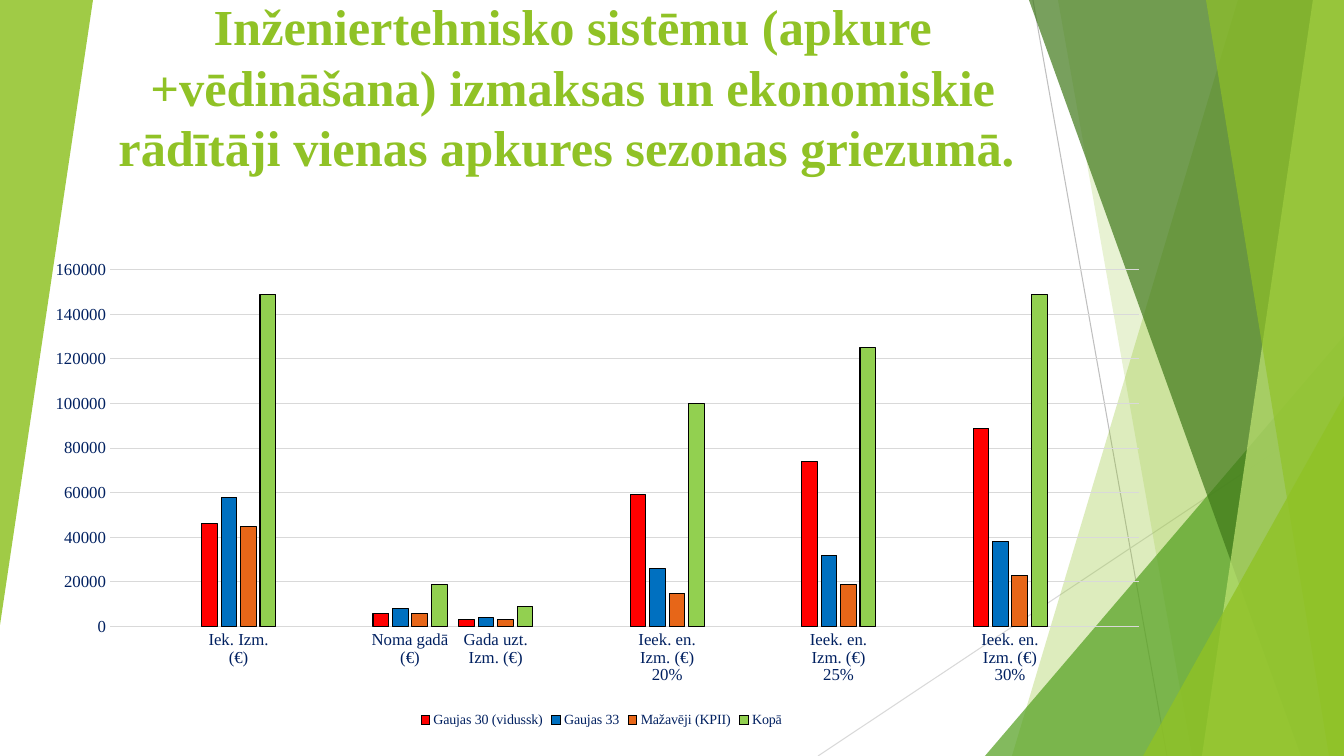
from dataclasses import dataclass

from lxml.etree import SubElement
from pptx import Presentation
from pptx.chart.data import CategoryChartData
from pptx.dml.color import RGBColor
from pptx.enum.chart import XL_CHART_TYPE as Kind, XL_LEGEND_POSITION as Spot, XL_TICK_MARK as Tick
from pptx.enum.shapes import MSO_CONNECTOR as Link, MSO_SHAPE as Form
from pptx.enum.text import MSO_ANCHOR as Anchor, MSO_AUTO_SIZE as Fit, PP_ALIGN as Align
from pptx.oxml import parse_xml
from pptx.oxml.ns import nsdecls, qn
from pptx.util import Pt

SCALE = 914400 / 100.8
WIDE, HIGH = 1344, 756


@dataclass(frozen=True)
class Theme:
    green: str = "90C226"
    leaf: str = "54A021"
    dark: str = "3F7819"
    pale: str = "C0E474"
    navy: str = "002060"
    black: str = "000000"
    grid: str = "D9D9D9"
    gray: str = "BFBFBF"
    serif: str = "Times New Roman"
    sans: str = "Cabin"
    head: int = 36
    label: int = 12
    small: int = 10
    thin: float = 0.75


@dataclass(frozen=True)
class Ray:
    x1: int
    y1: int
    x2: int
    y2: int
    color: str


@dataclass(frozen=True)
class Band:
    """Full-height band whose slanted left edge runs from top to foot."""
    top: int
    foot: int
    color: str
    alpha: int


@dataclass(frozen=True)
class Wedge:
    x: int
    y: int
    w: int
    h: int
    color: str
    alpha: int
    turn: int = 0


@dataclass(frozen=True)
class Series:
    name: str
    color: str
    costs: tuple[int, ...]


T = Theme()
RAYS = (Ray(1033, 0, 1167, HIGH, T.gray), Ray(WIDE, 406, 818, HIGH, T.grid))
FACETS = (
    Band(1238, 1012, T.green, 30),
    Band(1058, 1192, T.green, 20),
    Wedge(985, 336, 359, 420, T.leaf, 72),
    Band(1029, 1301, T.dark, 70),
    Band(1313, 1202, T.pale, 70),
    Band(1206, 1329, T.green, 65),
    Wedge(1143, 396, 201, 360, T.green, 80),
    Wedge(0, 0, 93, 625, T.green, 85, 180),
)
TITLE = ("Inženiertehnisko sistēmu (apkure +vēdināšana) izmaksas un ekonomiskie "
         "rādītāji vienas apkures sezonas griezumā. ")
SLOTS = 12
GROUPS = {1: "Iek. Izm. (€)", 3: "Noma gadā (€)", 4: "Gada uzt. Izm. (€)",
          6: "Ieek. en. Izm. (€) 20%", 8: "Ieek. en. Izm. (€) 25%",
          10: "Ieek. en. Izm. (€) 30%"}
SERIES = (
    Series("Gaujas 30 (vidussk)", "FF0000", (46000, 6000, 3000, 59000, 74000, 89000)),
    Series("Gaujas 33", "0070C0", (58000, 8000, 4000, 26000, 32000, 38000)),
    Series("Mažavēji (KPII)", "E76618", (45000, 6000, 3000, 15000, 19000, 23000)),
    Series("Kopā", "92D050", (149000, 19000, 9000, 100000, 125000, 149000)),
)


def px(*sizes: int) -> list[int]:
    return [round(size * SCALE) for size in sizes]


def set_font(font, name: str, size: int, color: str, bold: bool = False) -> None:
    font.name, font.size, font.bold = name, Pt(size), bold
    font.color.rgb = RGBColor.from_string(color)


def set_line(line, color: str) -> None:
    line.color.rgb = RGBColor.from_string(color)
    line.width = Pt(T.thin)


def set_fill(fill, color: str) -> None:
    fill.solid()
    fill.fore_color.rgb = RGBColor.from_string(color)


def draw_ray(slide, ray: Ray) -> None:
    line = slide.shapes.add_connector(Link.STRAIGHT, *px(ray.x1, ray.y1, ray.x2, ray.y2))
    set_line(line.line, ray.color)
    SubElement(line._element.spPr, qn("a:effectLst"))


def draw_facet(slide, facet: Band | Wedge) -> None:
    if isinstance(facet, Band):
        pen = slide.shapes.build_freeform(facet.top, 0, SCALE)
        pen.add_line_segments([(WIDE, 0), (WIDE, HIGH), (facet.foot, HIGH)])
        shape = pen.convert_to_shape()
    else:
        shape = slide.shapes.add_shape(
            Form.ISOSCELES_TRIANGLE, *px(facet.x, facet.y, facet.w, facet.h))
        shape.adjustments[0] = 1
        shape.rotation = facet.turn
    shape.shadow.inherit = False
    shape.line.fill.background()
    set_fill(shape.fill, facet.color)
    color = shape._element.spPr.find(qn("a:solidFill"))[0]
    SubElement(color, qn("a:alpha"), val=str(facet.alpha * 1000))


def draw_title(slide) -> None:
    title = slide.shapes.title
    title.left, title.top, title.width, title.height = px(66, 50, 1014, 132)
    frame = title.text_frame
    frame.text = TITLE
    frame.word_wrap, frame.auto_size = True, Fit.NONE
    frame.vertical_anchor = Anchor.BOTTOM
    frame.paragraphs[0].alignment = Align.CENTER
    set_font(frame.paragraphs[0].runs[0].font, T.serif, T.head, T.green, True)
    slide.shapes._spTree.append(title._element)


def place_plot(chart, x: float, y: float, w: float, h: float) -> None:
    """Fix the inner plot area as fractions of the chart."""
    area = chart._chartSpace.chart.plotArea
    for old in area.findall(qn("c:layout")):
        area.remove(old)
    sizes = "".join(f'<c:{key} val="{size}"/>' for key, size in zip("xywh", (x, y, w, h)))
    area.insert(0, parse_xml(
        f'<c:layout {nsdecls("c")}><c:manualLayout><c:layoutTarget val="inner"/>'
        f'<c:xMode val="edge"/><c:yMode val="edge"/>{sizes}</c:manualLayout></c:layout>'))


def draw_chart(slide) -> None:
    data = CategoryChartData()
    data.categories = [GROUPS.get(slot, "") for slot in range(SLOTS)]
    for item in SERIES:
        costs = dict(zip(GROUPS, item.costs))
        data.add_series(item.name, [costs.get(slot) for slot in range(SLOTS)])
    chart = slide.shapes.add_chart(
        Kind.COLUMN_CLUSTERED, *px(30, 147, 1143, 585), data).chart
    set_font(chart.font, T.sans, T.small, T.black)
    chart.has_title = False
    place_plot(chart, 0.07, 0.21, 0.9, 0.61)

    plot = chart.plots[0]
    plot.gap_width, plot.overlap, plot.vary_by_categories = 75, -25, False
    for bars, item in zip(plot.series, SERIES):
        set_fill(bars.format.fill, item.color)
        set_line(bars.format.line, T.black)

    base, scale = chart.category_axis, chart.value_axis
    for axis in (base, scale):
        axis.major_tick_mark = axis.minor_tick_mark = Tick.NONE
        set_font(axis.tick_labels.font, T.serif, T.label, T.navy)
    set_line(base.format.line, T.grid)
    scale.format.line.fill.background()
    set_line(scale.major_gridlines.format.line, T.grid)
    scale.minimum_scale, scale.maximum_scale, scale.major_unit = 0, 160000, 20000

    chart.has_legend = True
    chart.legend.position = Spot.BOTTOM
    chart.legend.include_in_layout = False
    set_font(chart.legend.font, T.serif, T.small, T.navy)


def main() -> None:
    deck = Presentation()
    deck.slide_width, deck.slide_height = px(WIDE, HIGH)
    slide = deck.slides.add_slide(deck.slide_layouts.get_by_name("Title Only"))
    for ray in RAYS:
        draw_ray(slide, ray)
    for facet in FACETS:
        draw_facet(slide, facet)
    draw_title(slide)
    draw_chart(slide)
    deck.save("out.pptx")


if __name__ == "__main__":
    main()
